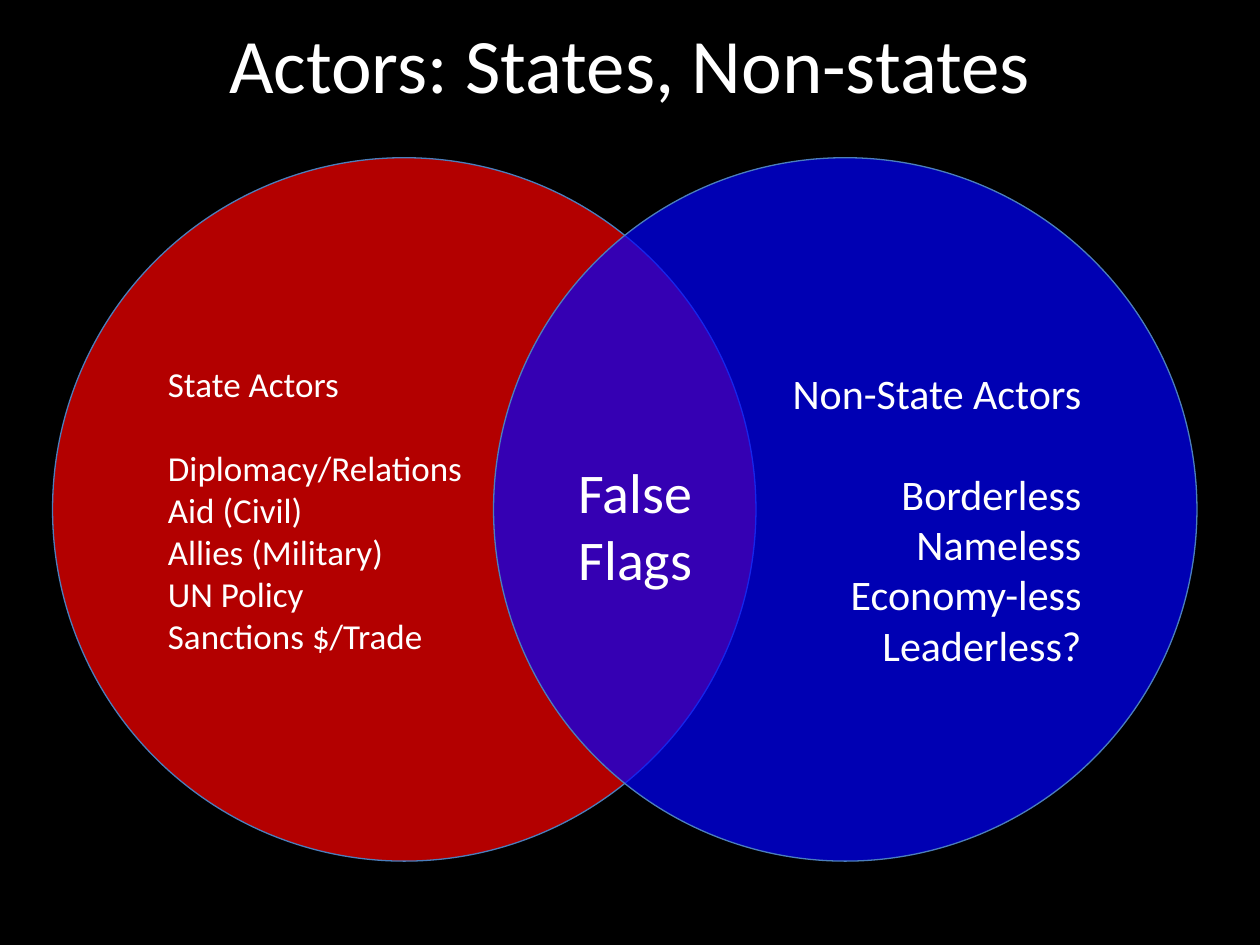
"""Build a Venn diagram slide of state and non-state actors."""
from lxml import etree
from pptx import Presentation
from pptx.dml.color import RGBColor
from pptx.enum.shapes import MSO_SHAPE
from pptx.enum.text import MSO_ANCHOR, PP_ALIGN
from pptx.oxml.ns import qn
from pptx.util import Cm, Pt

OVAL = MSO_SHAPE.OVAL
MIDDLE, TOP = MSO_ANCHOR.MIDDLE, MSO_ANCHOR.TOP
LEFT, CENTER, RIGHT = PP_ALIGN.LEFT, PP_ALIGN.CENTER, PP_ALIGN.RIGHT
FONT = "Calibri"
COLORS = {
    "back": "000000",
    "text": "FFFFFF",
    "state": "FF0000",
    "rogue": "0000FF",
    "edge": "4B7EBC",
}


def tint(name):
    return RGBColor.from_string(COLORS[name])


def write(shape, lines, size, align, anchor, gap=0):
    frame = shape.text_frame
    frame.word_wrap = True
    frame.vertical_anchor = anchor
    for i, line in enumerate(lines):
        para = frame.add_paragraph() if i else frame.paragraphs[0]
        para.alignment = align
        if i == 1:
            para.space_before = Pt(gap)
        run = para.add_run()
        run.text = line
        run.font.name = FONT
        run.font.size = Pt(size)
        run.font.color.rgb = tint("text")


deck = Presentation()
deck.slide_width, deck.slide_height = Cm(25.4), Cm(19.05)
slide = deck.slides.add_slide(deck.slide_layouts[5])
slide.background.fill.solid()
slide.background.fill.fore_color.rgb = tint("back")

title = slide.shapes.title
title.left, title.top, title.width, title.height = Cm(1.27), Cm(0), Cm(22.86), Cm(2.54)
write(title, ["Actors: States, Non-states"], 44, CENTER, MIDDLE)

state = ["State Actors", "Diplomacy/Relations", "Aid (Civil)",
         "Allies (Military)", "UN Policy", "Sanctions $/Trade"]
rogue = ["Non-State Actors", "Borderless", "Nameless", "Economy-less", "Leaderless?"]
circles = [
    ("state", 1.06, state, 20, LEFT, 0.13),
    ("rogue", 9.95, rogue, 24, RIGHT, 0.49),
]
for name, left, lines, size, align, inset in circles:
    oval = slide.shapes.add_shape(OVAL, Cm(left), Cm(3.18), Cm(14.18), Cm(14.18))
    oval.shadow.inherit = False
    oval.fill.solid()
    oval.fill.fore_color.rgb = tint(name)
    color = oval.fill._xPr.find(".//" + qn("a:srgbClr"))
    etree.SubElement(color, qn("a:alpha"), val="70000")
    oval.line.color.rgb = tint("edge")
    oval.line.width = Pt(0.75)
    oval.text_frame.margin_top = Cm(inset)
    write(oval, lines, size, align, MIDDLE, size * 1.2)

label = slide.shapes.add_textbox(Cm(9.1), Cm(9.1), Cm(7.42), Cm(3))
write(label, ["False", "Flags"], 32, CENTER, TOP)

deck.save("out.pptx")
